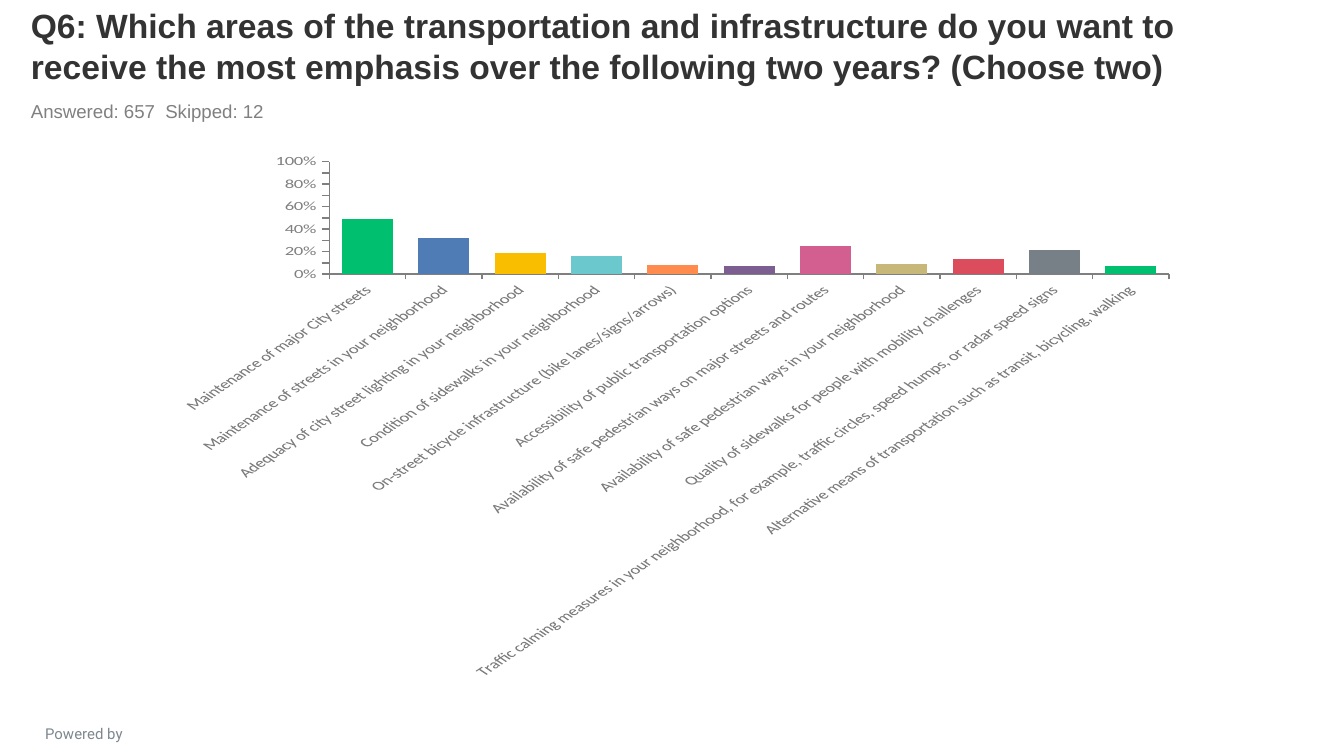
from lxml import etree
from pptx import Presentation
from pptx.chart.data import CategoryChartData
from pptx.dml.color import RGBColor
from pptx.enum.chart import XL_CHART_TYPE, XL_TICK_LABEL_POSITION, XL_TICK_MARK
from pptx.enum.text import MSO_ANCHOR, MSO_AUTO_SIZE, PP_ALIGN
from pptx.oxml.ns import qn
from pptx.util import Inches, Pt

DARK = RGBColor(0x33, 0x33, 0x33)
GRAY = RGBColor(0x80, 0x80, 0x80)
AXIS_GRAY = RGBColor(0x7F, 0x7F, 0x7F)
FOOTER_GRAY = RGBColor(0x7C, 0x87, 0x8E)
GREEN = RGBColor(0x00, 0xBF, 0x6F)
BLUE = RGBColor(0x50, 0x7C, 0xB6)
YELLOW = RGBColor(0xF9, 0xBE, 0x00)
TEAL = RGBColor(0x6B, 0xC8, 0xCD)
ORANGE = RGBColor(0xFF, 0x8B, 0x4F)
PURPLE = RGBColor(0x7D, 0x5E, 0x90)
PINK = RGBColor(0xD2, 0x5F, 0x90)
SAND = RGBColor(0xC7, 0xB8, 0x79)
RED = RGBColor(0xDB, 0x4D, 0x5C)
SLATE = RGBColor(0x76, 0x80, 0x86)

ANSWERS = [
    ("Maintenance of major City streets", 0.49, GREEN),
    ("Maintenance of streets in your neighborhood", 0.32, BLUE),
    ("Adequacy of city street lighting in your neighborhood", 0.19, YELLOW),
    ("Condition of sidewalks in your neighborhood", 0.16, TEAL),
    ("On-street bicycle infrastructure (bike lanes/signs/arrows)", 0.08, ORANGE),
    ("Accessibility of public transportation options", 0.07, PURPLE),
    ("Availability of safe pedestrian ways on major streets and routes", 0.25, PINK),
    ("Availability of safe pedestrian ways in your neighborhood", 0.09, SAND),
    ("Quality of sidewalks for people with mobility challenges", 0.13, RED),
    ("Traffic calming measures in your neighborhood, for example, traffic circles, "
     "speed humps, or radar speed signs", 0.21, SLATE),
    ("Alternative means of transportation such as transit, bicycling, walking",
     0.07, GREEN),
]


def write(sp, box, text, font, size, color, align=PP_ALIGN.LEFT, bold=False):
    """Place a shape at box (in inches) and add one formatted run to it."""
    sp.left, sp.top, sp.width, sp.height = [Inches(v) for v in box]
    tf = sp.text_frame
    tf.word_wrap = True
    tf.auto_size = MSO_AUTO_SIZE.NONE
    p = tf.paragraphs[0]
    p.alignment = align
    p.space_before = Pt(0)
    r = p.add_run()
    r.text = text
    r.font.name, r.font.size, r.font.bold = font, Pt(size), bold
    r.font.color.rgb = color


prs = Presentation()
prs.slide_width = Inches(10)
prs.slide_height = Inches(10 * 9 / 16)
s = prs.slides.add_slide(prs.slide_layouts[1])

# Footer
sp = s.shapes.add_textbox(0, 0, 0, 0)
write(sp, (0.05, 5.34, 1.15, 0.18), "Powered by", "Roboto", 8, FOOTER_GRAY,
      PP_ALIGN.CENTER)

# Question
title = s.shapes.title
write(title, (0.13, 0.09, 9, 0.6),
      "Q6: Which areas of the transportation and infrastructure do you want to "
      "receive the most emphasis over the following two years? (Choose two)",
      "Arial", 18, DARK, bold=True)
title.text_frame.vertical_anchor = MSO_ANCHOR.BOTTOM

# Response counts, set apart by a tab stop
body = s.placeholders[1]
pPr = body.text_frame.paragraphs[0]._p.get_or_add_pPr()
pPr.set("marL", "0")
pPr.set("indent", "0")
etree.SubElement(pPr, qn("a:buNone"))
tabs = etree.SubElement(pPr, qn("a:tabLst"))
etree.SubElement(tabs, qn("a:tab"), pos=str(Inches(1.04)), algn="l")
write(body, (0.13, 0.69, 9, 0.26), "Answered: 657\tSkipped: 12", "Arial", 10, GRAY)

# Chart
data = CategoryChartData(number_format="0%")
data.categories = [label for label, _, _ in ANSWERS]
data.add_series("Series 1", [share for _, share, _ in ANSWERS])
chart = s.shapes.add_chart(XL_CHART_TYPE.COLUMN_CLUSTERED, Inches(1.2), Inches(1.15),
                           Inches(7.65), Inches(3.9), data).chart
chart.has_legend = False
chart.has_title = False
chart.font.name, chart.font.size = "Calibri", Pt(18)
chart.font.color.rgb = DARK

plot = chart.plots[0]
plot.gap_width, plot.overlap = 50, 100
plot.vary_by_categories = False
series = plot.series[0]
series.format.fill.solid()
series.format.fill.fore_color.rgb = GREEN
for i, (_, _, color) in enumerate(ANSWERS):
    fill = series.points[i].format.fill
    fill.solid()
    fill.fore_color.rgb = color

for axis in (chart.category_axis, chart.value_axis):
    axis.has_major_gridlines = False
    axis.major_tick_mark = XL_TICK_MARK.OUTSIDE
    axis.format.line.color.rgb = AXIS_GRAY
    axis.format.line.width = Pt(0.75)
    font = axis.tick_labels.font
    font.name, font.size = "Calibri", Pt(10)
    font.color.rgb = AXIS_GRAY

cat_axis, val_axis = chart.category_axis, chart.value_axis
cat_axis.tick_label_position = XL_TICK_LABEL_POSITION.LOW
cat_axis._element.find(qn("c:txPr")).find(qn("a:bodyPr")).set("rot", "-2700000")
val_axis.minimum_scale, val_axis.maximum_scale = 0, 1
val_axis.major_unit = 0.1
val_axis.tick_labels.number_format = "0%"
val_axis.tick_labels.number_format_is_linked = False

prs.save("out.pptx")
